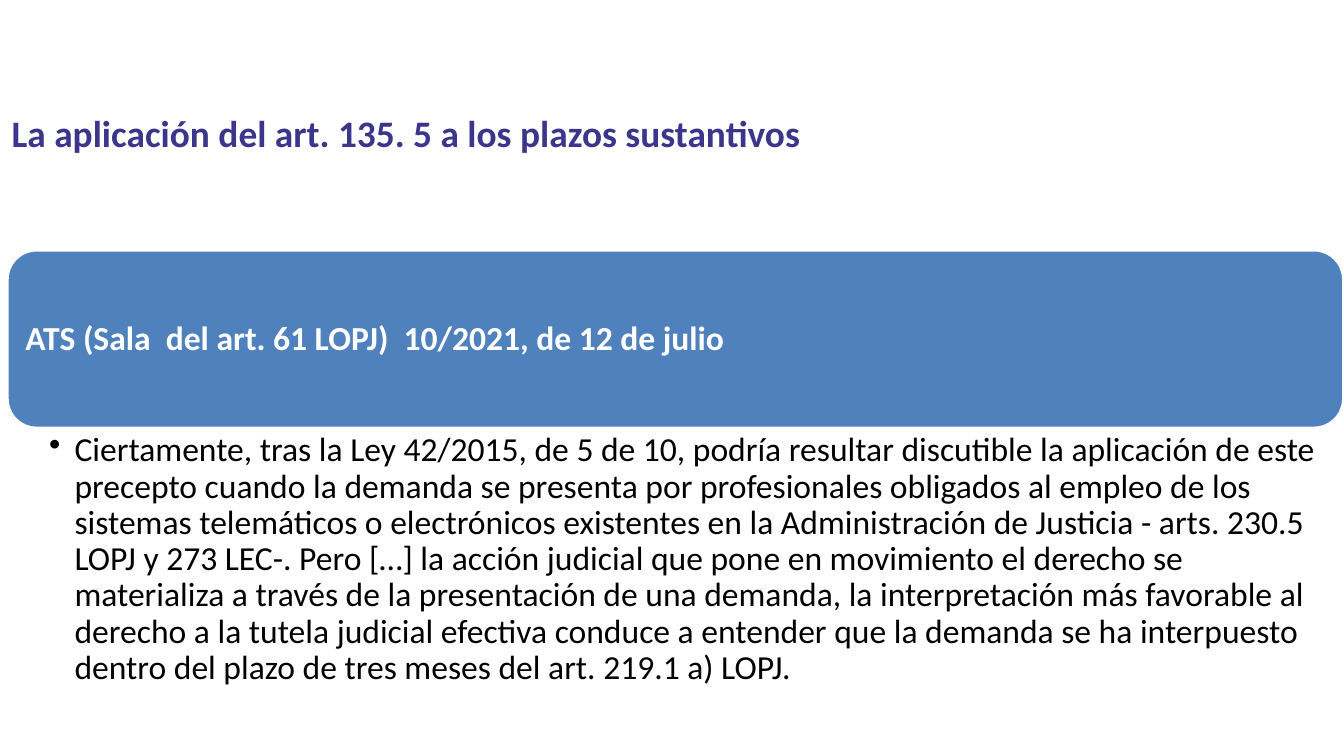
from lxml import etree
from pptx import Presentation
from pptx import util as u
from pptx.dml.color import RGBColor
from pptx.enum import shapes, text
from pptx.oxml import ns

COLORS = {
    "title": "3B358B",
    "band": "4F81BD",
    "white": "FFFFFF",
    "body": "000000",
}
FONT = "Calibri"

TITLE = "La aplicación del art. 135. 5 a los plazos sustantivos"
RULING = "ATS (Sala  del art. 61 LOPJ)  10/2021, de 12 de julio"
QUOTE = (
    "Ciertamente, tras la Ley 42/2015, de 5 de 10, podría resultar discutible "
    "la aplicación de este precepto cuando la demanda se presenta por "
    "profesionales obligados al empleo de los sistemas telemáticos o "
    "electrónicos existentes en la Administración de Justicia - arts. 230.5 "
    "LOPJ y 273 LEC-. Pero […] la acción judicial que pone en movimiento el "
    "derecho se materializa a través de la presentación de una demanda, la "
    "interpretación más favorable al derecho a la tutela judicial efectiva "
    "conduce a entender que la demanda se ha interpuesto dentro del plazo de "
    "tres meses del art. 219.1 a) LOPJ."
)


def color(name):
    return RGBColor.from_string(COLORS[name])


def add_band(slide, left, top, width, height):
    """Rounded rectangle behind the ruling's heading."""
    band = slide.shapes.add_shape(
        shapes.MSO_SHAPE.ROUNDED_RECTANGLE,
        u.Cm(left), u.Cm(top), u.Cm(width), u.Cm(height))
    band.shadow.inherit = False
    band.fill.solid()
    band.fill.fore_color.rgb = color("band")
    band.line.color.rgb = color("white")
    band.line.width = u.Pt(2)


def add_bullet(paragraph, indent):
    """Hanging bullet on the second outline level."""
    paragraph.level = 1
    properties = paragraph._p.get_or_add_pPr()
    properties.set("marL", str(u.Cm(indent)))
    properties.set("indent", str(-u.Cm(indent)))
    etree.SubElement(properties, ns.qn("a:buChar"), char="•")


def add_text(slide, box, words, size, ink, bold=False, insets=None,
             anchor=text.MSO_ANCHOR.TOP, spacing=None, bullet_indent=None):
    """One-paragraph text box; insets run left, top, right, bottom."""
    frame = slide.shapes.add_textbox(*(u.Cm(n) for n in box)).text_frame
    frame.word_wrap = True
    frame.vertical_anchor = anchor
    if insets:
        (frame.margin_left, frame.margin_top,
         frame.margin_right, frame.margin_bottom) = (u.Cm(n) for n in insets)

    paragraph = frame.paragraphs[0]
    if bullet_indent:
        add_bullet(paragraph, bullet_indent)
    paragraph.alignment = text.PP_ALIGN.LEFT
    if spacing:
        paragraph.line_spacing = spacing

    run = paragraph.add_run()
    run.text = words
    run.font.name = FONT
    run.font.size = u.Pt(size)
    run.font.bold = bold
    run.font.color.rgb = color(ink)


def main():
    deck = Presentation()
    deck.slide_width, deck.slide_height = u.Cm(25.4), u.Cm(14.29)
    slide = deck.slides.add_slide(deck.slide_layouts[6])

    # Title
    add_text(slide, (-0.03, 1.96, 22.86, 2.39), TITLE, 20, "title", bold=True)

    # Ruling heading on its band
    add_band(slide, 0.13, 4.72, 25.27, 3.38)
    add_text(slide, (0.3, 4.89, 24.94, 3.05), RULING, 18, "white", bold=True,
             insets=(0.18,) * 4, anchor=text.MSO_ANCHOR.MIDDLE, spacing=0.9)

    # Quoted reasoning
    add_text(slide, (0.13, 8.1, 25.27, 5.05), QUOTE, 18, "body",
             insets=(0.8, 0.08, 0.36, 0.08), spacing=0.9, bullet_indent=0.48)

    deck.save("out.pptx")


if __name__ == "__main__":
    main()
